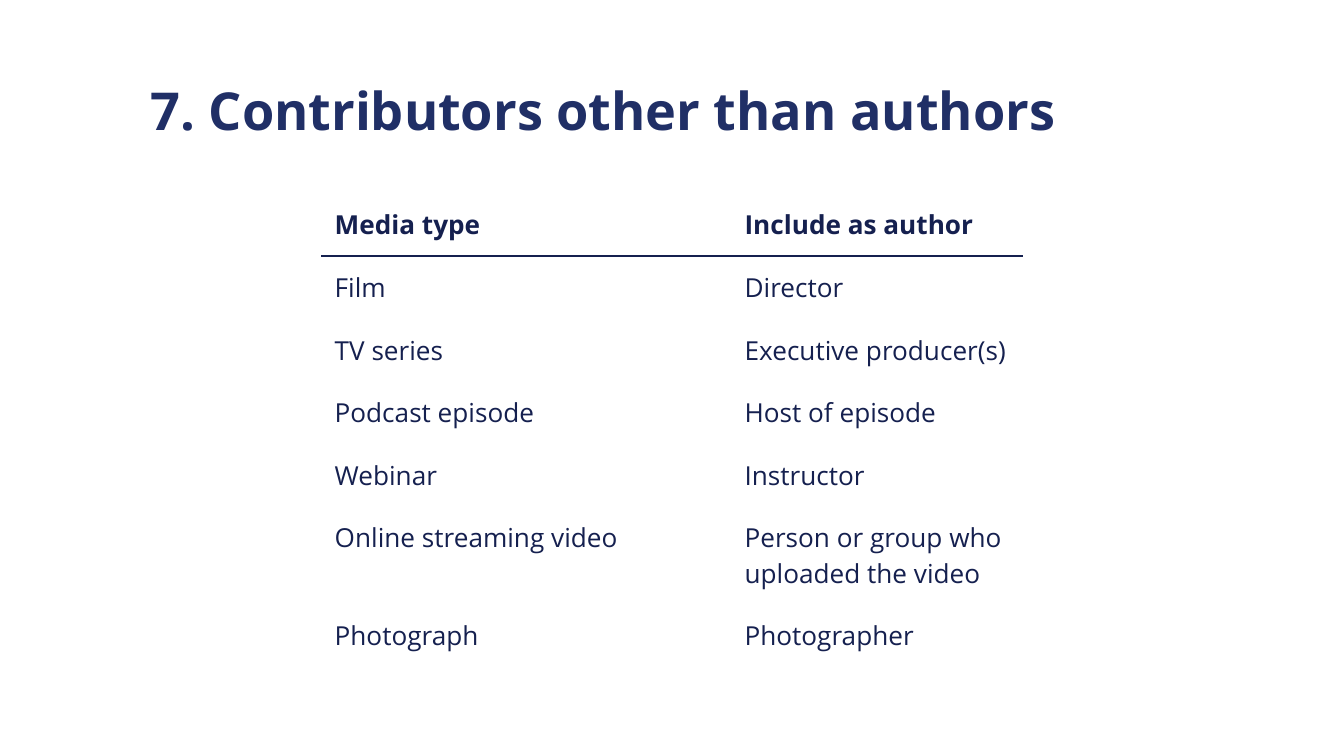
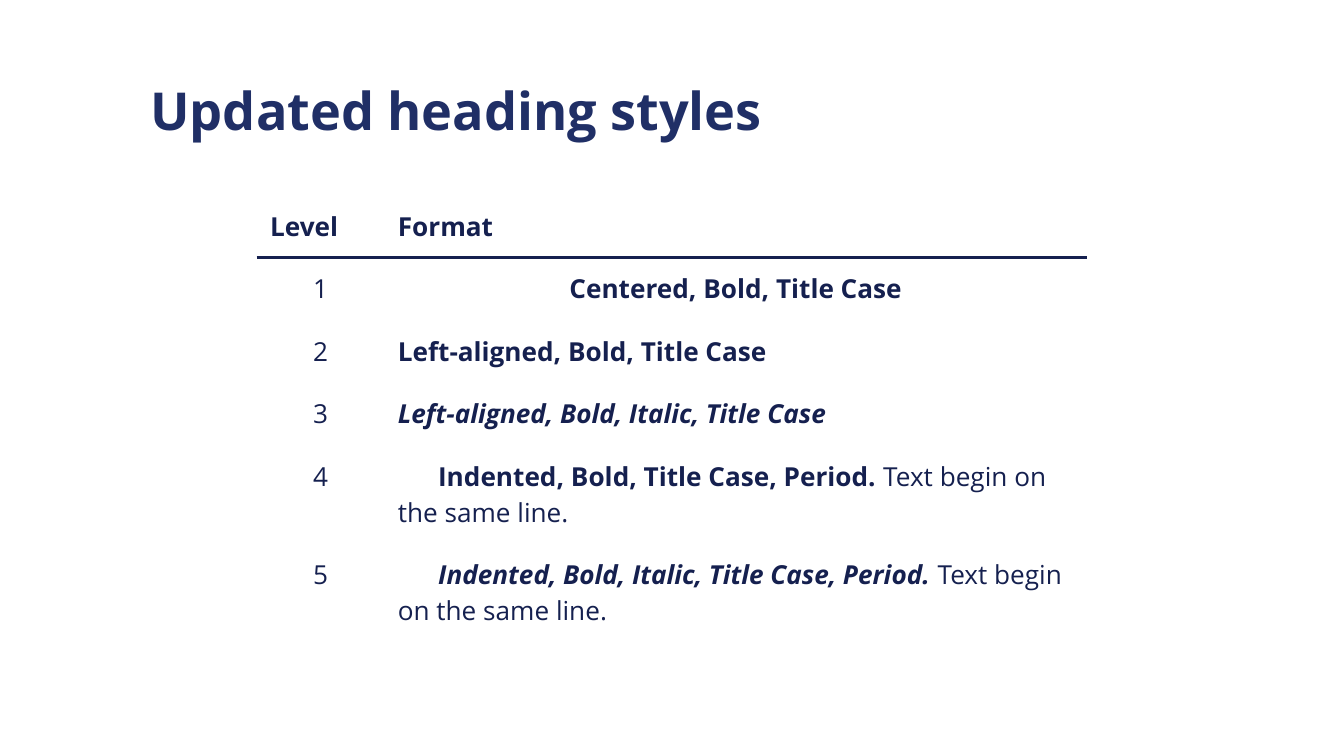
from dataclasses import dataclass

from lxml.etree import SubElement
from pptx import Presentation
from pptx.dml.color import RGBColor
from pptx.enum.text import MSO_ANCHOR as Anchor, MSO_AUTO_SIZE as AutoSize, PP_ALIGN as Align
from pptx.oxml import parse_xml
from pptx.oxml.ns import nsdecls, qn
from pptx.util import Inches, Pt


@dataclass(frozen=True)
class Theme:
    font: str = "Open Sans"
    title_color: str = "202F66"
    text_color: str = "15204F"
    background: str = "FFFFFF"
    title_size: int = 28
    table_size: int = 14
    rule_width: float = 1.5
    margin: float = 0.1
    row_height: float = 0.42
    first_line: float = 0.3


@dataclass(frozen=True)
class Run:
    text: str
    bold: bool = False
    italic: bool = False


@dataclass(frozen=True)
class Entry:
    """One table cell: its runs, alignment and first-line indent."""
    runs: tuple
    align: Align = Align.LEFT
    indented: bool = False


def entry(text, bold=False, italic=False, align=Align.LEFT):
    return Entry((Run(text, bold, italic),), align)


def run_in(heading, italic=False):
    """An indented heading followed by plain text on the same line."""
    return Entry((Run(heading + " ", True, italic), Run("Text begin on the same line.")),
                 indented=True)


class Deck:
    def __init__(self, theme):
        self.theme = theme
        self.prs = Presentation()
        # Widescreen, 16:9
        self.prs.slide_width, self.prs.slide_height = Inches(10), Inches(10 * 9 / 16)
        self.slide = None

    def add_slide(self, title):
        self.slide = self.prs.slides.add_slide(self.prs.slide_layouts[5])
        fill = self.slide.background.fill
        fill.solid()
        fill.fore_color.rgb = RGBColor.from_string(self.theme.background)
        self.title(title)

    def title(self, text):
        heading = self.slide.shapes.title
        heading.left, heading.top = Inches(1.02), Inches(0.5)
        heading.width, heading.height = Inches(7.87), Inches(0.63)
        frame = heading.text_frame
        frame.auto_size, frame.word_wrap = AutoSize.NONE, True
        frame.vertical_anchor = Anchor.MIDDLE
        self.margins(frame)
        paragraph = frame.paragraphs[0]
        paragraph.alignment = Align.LEFT
        self.run(paragraph, Run(text, bold=True), self.theme.title_size, self.theme.title_color)

    def margins(self, holder):
        for side in ("left", "top", "right", "bottom"):
            setattr(holder, f"margin_{side}", Inches(self.theme.margin))

    def run(self, paragraph, content, size, color):
        run = paragraph.add_run()
        run.text = content.text
        font = run.font
        font.name, font.size = self.theme.font, Pt(size)
        font.bold, font.italic = content.bold, content.italic
        font.color.rgb = RGBColor.from_string(color)

    def table(self, left, top, widths, headers, rows):
        grid = [[entry(header, bold=True) for header in headers], *rows]
        height = self.theme.row_height * len(grid)
        table = self.slide.shapes.add_table(
            len(grid), len(widths), Inches(left), Inches(top),
            Inches(sum(widths)), Inches(height)).table
        table.first_row = table.horz_banding = False
        for column, width in zip(table.columns, widths):
            column.width = Inches(width)
        # The rule between header and body belongs to both rows
        ruled_edges = {0: "lnB", 1: "lnT"}
        for r, row in enumerate(grid):
            table.rows[r].height = Inches(self.theme.row_height)
            for c, content in enumerate(row):
                self.cell(table.cell(r, c), content, ruled_edges.get(r))

    def cell(self, cell, content, ruled_edge):
        cell.fill.background()
        cell.vertical_anchor = Anchor.TOP
        self.margins(cell)
        self.borders(cell, ruled_edge)
        paragraph = cell.text_frame.paragraphs[0]
        paragraph.alignment = content.align
        if content.indented:
            properties = paragraph._p.get_or_add_pPr()
            properties.set("marL", "0")
            properties.set("indent", str(Inches(self.theme.first_line)))
        for run in content.runs:
            self.run(paragraph, run, self.theme.table_size, self.theme.text_color)

    def borders(self, cell, ruled_edge):
        properties = cell._tc.get_or_add_tcPr()
        for position, edge in enumerate(("lnL", "lnR", "lnT", "lnB")):
            line = parse_xml(f'<a:{edge} {nsdecls("a")}/>')
            if edge == ruled_edge:
                line.set("w", str(Pt(self.theme.rule_width)))
                fill = SubElement(line, qn("a:solidFill"))
                SubElement(fill, qn("a:srgbClr"), val=self.theme.text_color)
            else:
                SubElement(line, qn("a:noFill"))
            properties.insert(position, line)


def main():
    deck = Deck(Theme())

    # Contributors by media type
    contributors = [
        ("Film", "Director"),
        ("TV series", "Executive producer(s)"),
        ("Podcast episode", "Host of episode"),
        ("Webinar", "Instructor"),
        ("Online streaming video", "Person or group who uploaded the video"),
        ("Photograph", "Photographer"),
    ]
    deck.add_slide("7. Contributors other than authors")
    deck.table(2.39, 1.44, (3.05, 2.17), ("Media type", "Include as author"),
               [[entry(media), entry(author)] for media, author in contributors])

    # Heading levels, each shown in its own format
    formats = [
        entry("Centered, Bold, Title Case", bold=True, align=Align.CENTER),
        entry("Left-aligned, Bold, Title Case", bold=True),
        entry("Left-aligned, Bold, Italic, Title Case", bold=True, italic=True),
        run_in("Indented, Bold, Title Case, Period."),
        run_in("Indented, Bold, Italic, Title Case, Period.", italic=True),
    ]
    deck.add_slide("Updated heading styles")
    deck.table(1.91, 1.45, (0.95, 5.23), ("Level", "Format"),
               [[entry(str(level), align=Align.CENTER), style]
                for level, style in enumerate(formats, 1)])

    deck.prs.save("out.pptx")


if __name__ == "__main__":
    main()
